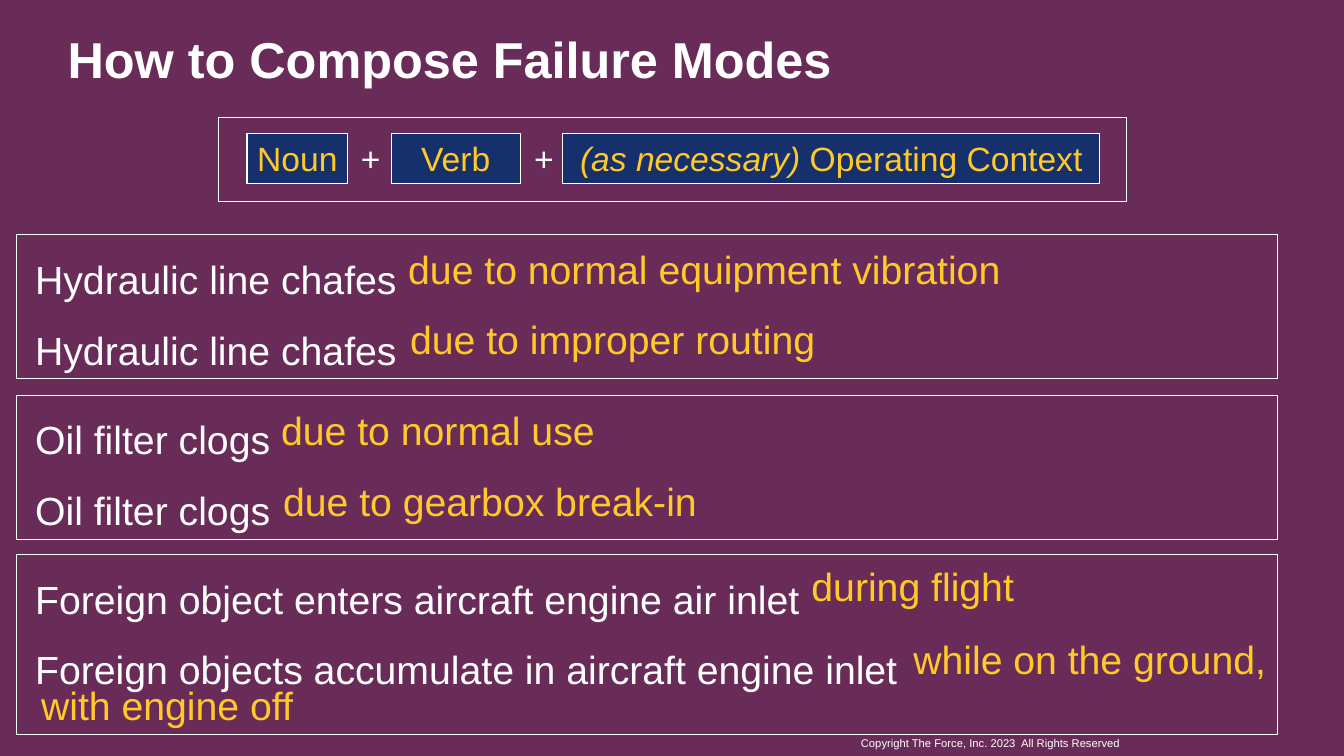
from dataclasses import dataclass
from typing import Optional

from pptx import Presentation
from pptx.dml.color import RGBColor
from pptx.enum.shapes import MSO_SHAPE
from pptx.enum.text import MSO_ANCHOR as Anchor, PP_ALIGN as Align
from pptx.slide import Slide
from pptx.text.text import TextFrame
from pptx.util import Inches, Pt


@dataclass(frozen=True)
class Theme:
    font: str = "Arial"
    background: RGBColor = RGBColor(0x69, 0x2C, 0x58)
    navy: RGBColor = RGBColor(0x15, 0x30, 0x6B)
    white: RGBColor = RGBColor(0xFF, 0xFF, 0xFF)
    gold: RGBColor = RGBColor(0xFF, 0xC9, 0x2A)
    title_size: int = 36
    formula_size: int = 24
    example_size: int = 28
    copyright_size: int = 8
    line_width: float = 0.75


THEME = Theme()


@dataclass(frozen=True)
class Box:
    left: float
    top: float
    width: float
    height: float

    def lengths(self) -> tuple:
        return tuple(Inches(n) for n in (self.left, self.top, self.width, self.height))


@dataclass(frozen=True)
class Run:
    text: str
    size: int
    color: RGBColor = THEME.white
    bold: bool = False
    italic: bool = False


@dataclass(frozen=True)
class FormulaPart:
    left: float
    width: float
    runs: tuple[Run, ...]
    framed: bool = True


@dataclass(frozen=True)
class Context:
    text: str
    left: float
    top: float
    width: float


@dataclass(frozen=True)
class Example:
    top: float
    height: float
    failures: tuple[str, ...]
    contexts: tuple[Context, ...]


def write(frame: TextFrame, lines: list[tuple[Run, ...]],
          align: Align = Align.LEFT, spacing: float = 1.0) -> None:
    """Write each line as one paragraph, run by run."""
    frame.word_wrap = True
    for index, line in enumerate(lines):
        paragraph = frame.add_paragraph() if index else frame.paragraphs[0]
        paragraph.alignment = align
        paragraph.line_spacing = spacing
        for part in line:
            run = paragraph.add_run()
            run.text = part.text
            run.font.name = THEME.font
            run.font.size = Pt(part.size)
            run.font.color.rgb = part.color
            run.font.bold = part.bold
            run.font.italic = part.italic


def add_text(slide: Slide, box: Box, lines: list[tuple[Run, ...]],
             anchor: Anchor = Anchor.TOP, spacing: float = 1.0) -> TextFrame:
    frame = slide.shapes.add_textbox(*box.lengths()).text_frame
    frame.vertical_anchor = anchor
    write(frame, lines, spacing=spacing)
    return frame


def add_frame(slide: Slide, box: Box, fill: Optional[RGBColor] = None,
              runs: tuple[Run, ...] = ()) -> None:
    shape = slide.shapes.add_shape(MSO_SHAPE.RECTANGLE, *box.lengths())
    shape.shadow.inherit = False
    shape.line.color.rgb = THEME.white
    shape.line.width = Pt(THEME.line_width)
    if fill is None:
        shape.fill.background()
    else:
        shape.fill.solid()
        shape.fill.fore_color.rgb = fill
    if runs:
        shape.text_frame.vertical_anchor = Anchor.MIDDLE
        write(shape.text_frame, [runs], Align.CENTER)


def add_formula_part(slide: Slide, part: FormulaPart) -> None:
    box = Box(part.left, 1.32, part.width, 0.5)
    if part.framed:
        add_frame(slide, box, THEME.navy, part.runs)
    else:
        add_text(slide, box, [part.runs], Anchor.MIDDLE)


def add_example(slide: Slide, example: Example) -> None:
    add_frame(slide, Box(0.16, example.top, 12.51, example.height))
    failures = [(Run(text, THEME.example_size),) for text in example.failures]
    add_text(slide, Box(0.25, example.top - 0.08, 12.42, 1.51), failures, spacing=1.5)
    for context in example.contexts:
        run = Run(context.text, THEME.example_size, THEME.gold)
        add_text(slide, Box(context.left, context.top, context.width, 0.57),
                 [(run,)], Anchor.MIDDLE)


def term(text: str, italic: bool = False) -> Run:
    return Run(text, THEME.formula_size, THEME.gold, italic=italic)


PLUS = (Run("+", THEME.formula_size),)
FORMULA = (
    FormulaPart(2.45, 1, (term("Noun"),)),
    FormulaPart(3.48, 0.43, PLUS, framed=False),
    FormulaPart(3.88, 1.28, (term("Verb"),)),
    FormulaPart(5.2, 0.32, PLUS, framed=False),
    FormulaPart(5.58, 5.33, (term("(as necessary)", italic=True),
                             term(" Operating Context"))),
)
EXAMPLES = (
    Example(2.33, 1.43, ("Hydraulic line chafes",) * 2, (
        Context("due to normal equipment vibration", 3.95, 2.38, 6.61),
        Context("due to improper routing", 3.97, 3.08, 5.36),
    )),
    Example(3.92, 1.43, ("Oil filter clogs",) * 2, (
        Context("due to normal use", 2.69, 3.98, 6.61),
        Context("due to gearbox break-in", 2.71, 4.68, 5.36),
    )),
    Example(5.5, 1.79, (
        "Foreign object enters aircraft engine air inlet",
        "Foreign objects accumulate in aircraft engine inlet",
    ), (
        Context("during flight", 7.95, 5.53, 2.6),
        Context("while on the ground,", 8.96, 6.25, 3.88),
        Context("with engine off", 0.31, 6.71, 5.36),
    )),
)


def main() -> None:
    presentation = Presentation()
    presentation.slide_width = Inches(13.33)
    presentation.slide_height = Inches(7.5)
    slide = presentation.slides.add_slide(presentation.slide_layouts[6])
    slide.background.fill.solid()
    slide.background.fill.fore_color.rgb = THEME.background

    # Copyright line
    notice = Run("Copyright The Force, Inc. 2023  All Rights Reserved",
                 THEME.copyright_size)
    add_text(slide, Box(8.44, 7.26, 2.82, 0.24), [(notice,)])

    # Title
    title = Run("How to Compose Failure Modes", THEME.title_size, bold=True)
    frame = add_text(slide, Box(0.67, 0.26, 11.75, 0.62), [(title,)], Anchor.BOTTOM)
    frame.margin_left = frame.margin_right = Inches(0)
    frame.margin_top = frame.margin_bottom = Inches(0)

    # Formula: noun + verb + context
    add_frame(slide, Box(2.17, 1.17, 9, 0.83))
    for part in FORMULA:
        add_formula_part(slide, part)

    # Worked examples
    for example in EXAMPLES:
        add_example(slide, example)

    presentation.save("out.pptx")


if __name__ == "__main__":
    main()
